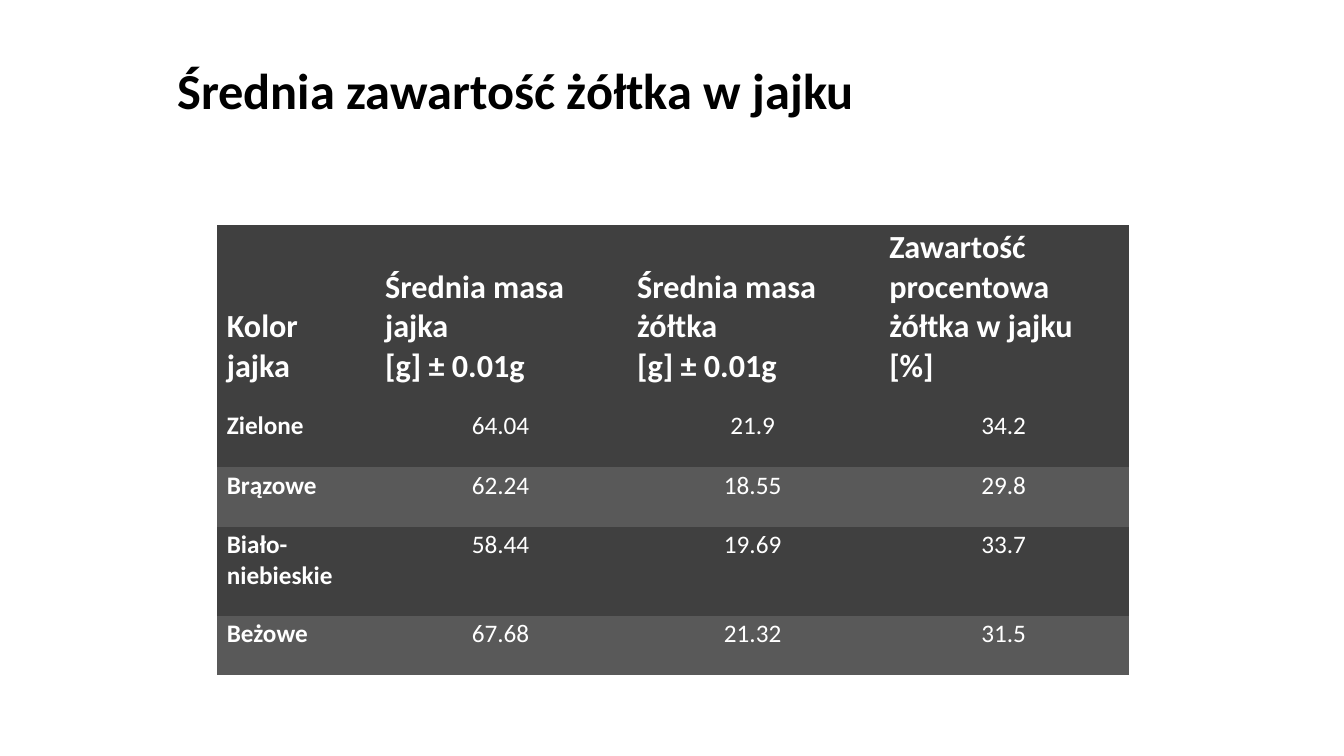
from lxml.etree import SubElement
from pptx import Presentation
from pptx.dml.color import RGBColor
from pptx.enum.text import MSO_ANCHOR as Anchor, MSO_AUTO_SIZE as AutoSize, PP_ALIGN as Align
from pptx.oxml.ns import qn
from pptx.util import Inches, Pt

BLACK = RGBColor(0, 0, 0)
WHITE = RGBColor(0xFF, 0xFF, 0xFF)
DARK = RGBColor(0x40, 0x40, 0x40)
GREY = RGBColor(0x59, 0x59, 0x59)
FONT = "Calibri"
PLAIN_TABLE = "{2D5ABB26-0587-4C30-8999-92F81FD0307C}"

COL_WIDTHS = [1.57, 2.5, 2.5, 2.48]
ROW_HEIGHTS = [1.8, 0.59, 0.59, 0.88, 0.59]
ROWS = [
    ["Kolor jajka", "Średnia masa jajka\n[g] ± 0.01g",
     "Średnia masa żółtka\n[g] ± 0.01g", "Zawartość procentowa\nżółtka w jajku [%]"],
    ["Zielone", "64.04", "21.9", "34.2"],
    ["Brązowe", "62.24", "18.55", "29.8"],
    ["Biało-niebieskie", "58.44", "19.69", "33.7"],
    ["Beżowe", "67.68", "21.32", "31.5"],
]


def write(tf, text, size, color=WHITE, bold=False, align=Align.LEFT, spacing=1.0):
    tf.word_wrap = True
    tf.text = text
    for p in tf.paragraphs:
        p.alignment = align
        p.line_spacing = spacing
        for r in p.runs:
            r.font.name = FONT
            r.font.size = Pt(size)
            r.font.bold = bold
            r.font.color.rgb = color


def add_left_border(cell, color):
    tc_pr = cell._tc.get_or_add_tcPr()
    ln = SubElement(tc_pr, qn("a:lnL"), w=str(Pt(1)))
    fill = SubElement(ln, qn("a:solidFill"))
    SubElement(fill, qn("a:srgbClr"), val=str(color))
    tc_pr.insert(0, ln)


def place_title(slide, left, top, width, height):
    sp = slide.shapes.title
    sp.left, sp.top, sp.width, sp.height = map(Inches, (left, top, width, height))
    tf = sp.text_frame
    tf.auto_size = AutoSize.NONE
    tf.vertical_anchor = Anchor.TOP
    write(tf, "Średnia zawartość żółtka w jajku", 36, BLACK, bold=True, spacing=0.9)


def format_cell(cell, text, row, col):
    header, label = row == 0, col == 0
    cell.margin_left, cell.margin_top = Inches(0.1), Inches(0.03)
    cell.margin_right, cell.margin_bottom = Inches(0.11), Inches(0.22)
    cell.vertical_anchor = Anchor.BOTTOM if header else Anchor.TOP
    cell.fill.solid()
    cell.fill.fore_color.rgb = GREY if row and row % 2 == 0 else DARK
    write(cell.text_frame, text, 23 if header else 18, bold=header or label,
          align=Align.LEFT if header or label else Align.CENTER)
    if label and not header:
        add_left_border(cell, WHITE)


def place_table(slide, left, top, width, height):
    frame = slide.shapes.add_table(len(ROWS), len(COL_WIDTHS),
                                   *map(Inches, (left, top, width, height)))
    frame.element.find(".//" + qn("a:tableStyleId")).text = PLAIN_TABLE
    table = frame.table
    for column, w in zip(table.columns, COL_WIDTHS):
        column.width = Inches(w)
    for row, h in zip(table.rows, ROW_HEIGHTS):
        row.height = Inches(h)
    for i, texts in enumerate(ROWS):
        for j, text in enumerate(texts):
            format_cell(table.cell(i, j), text, i, j)


def main():
    prs = Presentation()
    prs.slide_width, prs.slide_height = Inches(13.33), Inches(7.5)
    slide = prs.slides.add_slide(prs.slide_layouts[5])
    place_title(slide, 1.66, 0.6, 10.02, 1.24)
    place_table(slide, 2.15, 2.23, sum(COL_WIDTHS), sum(ROW_HEIGHTS))
    prs.save("out.pptx")


if __name__ == "__main__":
    main()
